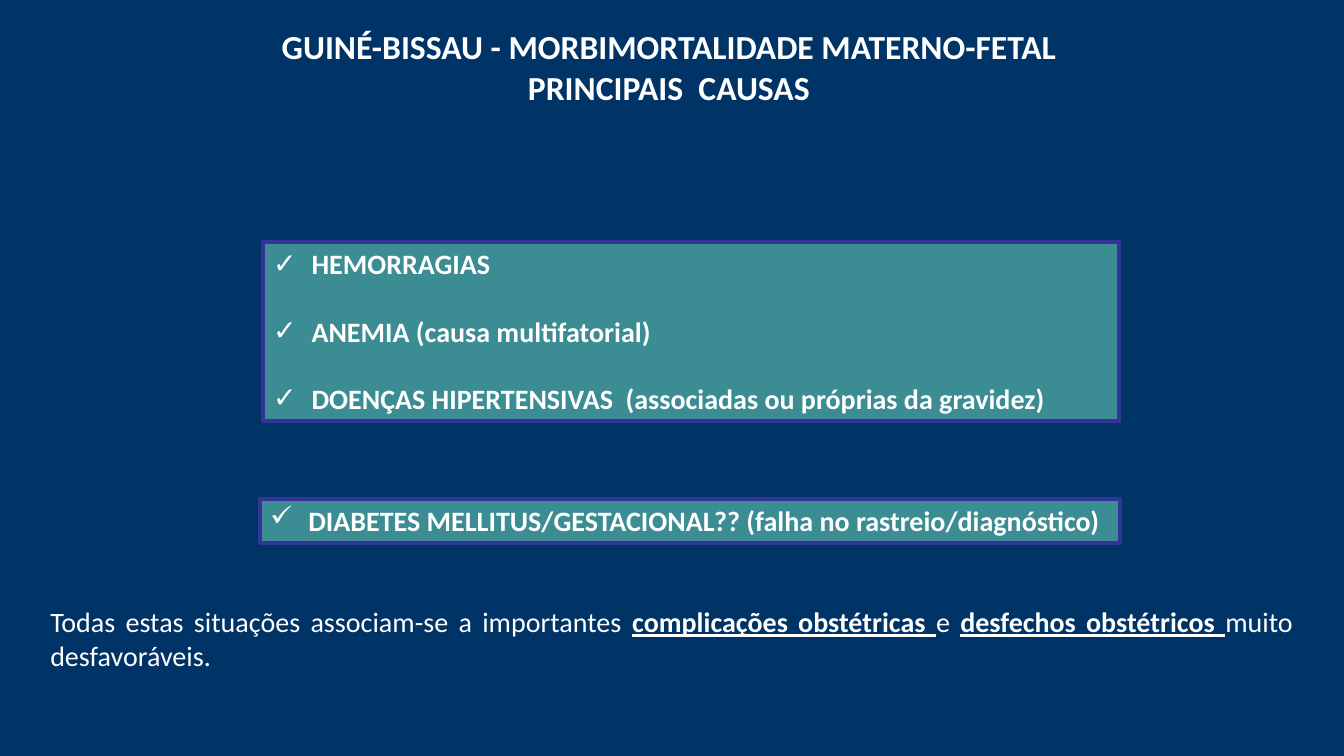
from lxml import etree
from pptx import Presentation
from pptx.dml.color import RGBColor
from pptx.enum.shapes import MSO_SHAPE
from pptx.enum.text import MSO_ANCHOR, MSO_AUTO_SIZE, PP_ALIGN
from pptx.oxml.ns import qn
from pptx.util import Inches, Pt

RECTANGLE = MSO_SHAPE.RECTANGLE
TOP = MSO_ANCHOR.TOP
NO_AUTOFIT = MSO_AUTO_SIZE.NONE
CENTER, JUSTIFY = PP_ALIGN.CENTER, PP_ALIGN.JUSTIFY

FONT = "Calibri"
NAVY, TEAL, INDIGO, WHITE = "003366", "3C8C93", "333399", "FFFFFF"
HANGING_INDENT = 0.38

TITLE_LINES = ["GUINÉ-BISSAU - MORBIMORTALIDADE MATERNO-FETAL", "PRINCIPAIS  CAUSAS"]
MAIN_CAUSES = [
    "HEMORRAGIAS",
    "ANEMIA (causa multifatorial)",
    "DOENÇAS HIPERTENSIVAS  (associadas ou próprias da gravidez)",
]
POSSIBLE_CAUSE = ["DIABETES MELLITUS/GESTACIONAL?? (falha no rastreio/diagnóstico)"]
CONCLUSION = [
    ("Todas estas situações associam-se a importantes ", False),
    ("complicações obstétricas ", True),
    ("e ", False),
    ("desfechos obstétricos ", True),
    ("muito desfavoráveis.", False),
]


def color(hex_value):
    return RGBColor.from_string(hex_value)


def place(shape, left, top, width, height):
    shape.left, shape.top = Inches(left), Inches(top)
    shape.width, shape.height = Inches(width), Inches(height)


def prepare_frame(shape):
    frame = shape.text_frame
    frame.word_wrap = True
    frame.auto_size = NO_AUTOFIT
    frame.vertical_anchor = TOP
    return frame


def format_paragraph(para, size, alignment, bold=None, space_before=0):
    para.alignment = alignment
    para.space_before = Pt(space_before)
    para.font.name = FONT
    para.font.size = Pt(size)
    para.font.bold = bold
    para.font.color.rgb = color(WHITE)


def add_check_mark(para):
    properties = para._p.get_or_add_pPr()
    properties.set("marL", str(Inches(HANGING_INDENT)))
    properties.set("indent", str(-Inches(HANGING_INDENT)))
    etree.SubElement(properties, qn("a:buChar")).set("char", "✓")


def fill_title(title):
    place(title, 0.16, 0.21, 12.95, 0.91)
    frame = prepare_frame(title)
    frame.text = "\n".join(TITLE_LINES)
    for para in frame.paragraphs:
        format_paragraph(para, 24, CENTER, bold=True)


def fill_cause_box(box, causes):
    """Style a framed teal box and list the causes with check marks."""
    box.fill.solid()
    box.fill.fore_color.rgb = color(TEAL)
    box.line.color.rgb = color(INDIGO)
    box.line.width = Pt(3)
    frame = prepare_frame(box)
    frame.text = "\n".join(causes)
    for index, para in enumerate(frame.paragraphs):
        add_check_mark(para)
        format_paragraph(para, 20, JUSTIFY, bold=True, space_before=24 if index else 0)


def add_conclusion(slide):
    box = slide.shapes.add_textbox(Inches(0.4), Inches(5.95), Inches(12.52), Inches(0.77))
    para = prepare_frame(box).paragraphs[0]
    format_paragraph(para, 20, JUSTIFY)
    for text, emphasized in CONCLUSION:
        span = para.add_run()
        span.text = text
        if emphasized:
            span.font.bold = True
            span.font.underline = True


def main():
    deck = Presentation()
    deck.slide_width, deck.slide_height = Inches(13.33), Inches(7.5)
    slide = deck.slides.add_slide(deck.slide_layouts[1])
    slide.background.fill.solid()
    slide.background.fill.fore_color.rgb = color(NAVY)

    fill_title(slide.shapes.title)
    main_box = slide.placeholders[1]
    place(main_box, 2.61, 2.4, 8.49, 1.78)
    fill_cause_box(main_box, MAIN_CAUSES)

    possible_box = slide.shapes.add_shape(
        RECTANGLE, Inches(2.58), Inches(4.95), Inches(8.53), Inches(0.44))
    possible_box.shadow.inherit = False
    fill_cause_box(possible_box, POSSIBLE_CAUSE)

    add_conclusion(slide)
    deck.save("out.pptx")


if __name__ == "__main__":
    main()
